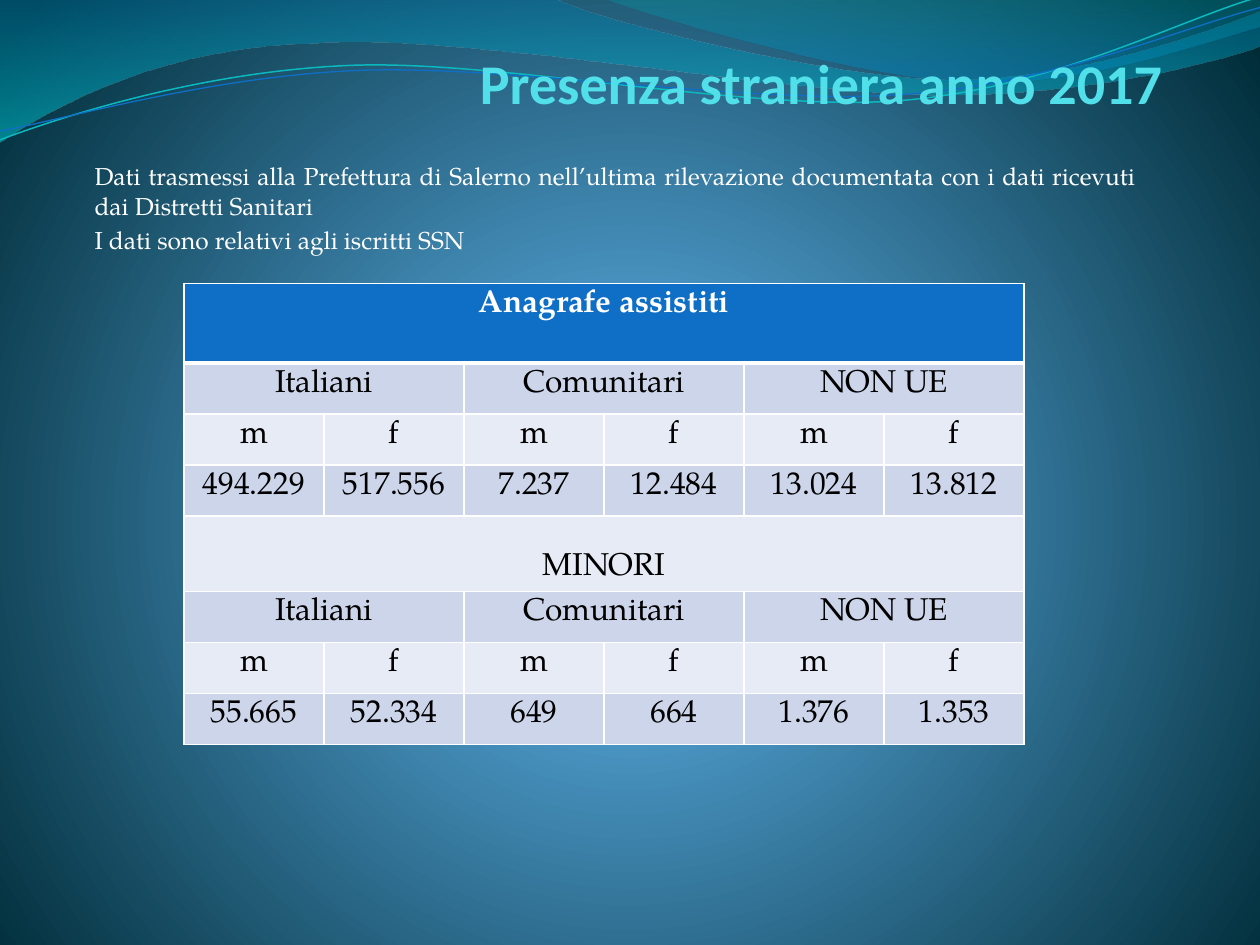
from dataclasses import dataclass

from lxml.etree import SubElement
from pptx import Presentation
from pptx.dml.color import RGBColor
from pptx.enum.text import MSO_ANCHOR, PP_ALIGN
from pptx.oxml import parse_xml
from pptx.oxml.ns import nsdecls, qn
from pptx.util import Inches, Pt

WHITE = RGBColor(0xFF, 0xFF, 0xFF)
BLACK = RGBColor(0, 0, 0)
AQUA = RGBColor(0x51, 0xE0, 0xEA)
TEAL = RGBColor(0x0A, 0xB8, 0xBF)
BLUE = RGBColor(0x0F, 0x6F, 0xC6)
BAND_DARK = RGBColor(0xCC, 0xD5, 0xEA)
BAND_LIGHT = RGBColor(0xE7, 0xEB, 0xF5)
SKY = RGBColor(0x4A, 0xA0, 0xD6)
STEEL = RGBColor(0x4C, 0x98, 0xC7)
NIGHT = RGBColor(0x00, 0x2C, 0x38)
DEEP_BLUE = RGBColor(0x00, 0x74, 0xA1)
CYAN = RGBColor(0x00, 0xC6, 0xCF)
SEA = RGBColor(0x00, 0xA1, 0xA9)
OCEAN = RGBColor(0x00, 0x8B, 0xBF)
SERIF = "TeX Gyre Pagella"
DOWNWARD = '<a:lin ang="5400000" scaled="1"/>'
RADIAL = ('<a:path path="circle"><a:fillToRect l="10000" t="110000" '
          'r="10000" b="100000"/></a:path>')


@dataclass
class Stop:
    position: int
    color: RGBColor
    opacity: int = 100


@dataclass
class Wave:
    """Two coordinates make a straight step, six a Bezier curve."""
    start: tuple
    steps: list
    stops: list | None = None
    line: RGBColor | None = None
    width: float = 0


@dataclass
class Style:
    size: float
    color: RGBColor
    font: str = SERIF
    bold: bool = False
    align: PP_ALIGN = PP_ALIGN.CENTER


WAVES = [
    Wave((0, 0), [(4.4, -0.01), (4.76, 0.17, 6.64, 0.63, 7.58, 0.63),
                  (8.53, 0.63, 9.58, 0.26, 10, 0.09), (10.01, 0.36),
                  (9.83, 0.44, 8.7, 0.76, 7.46, 0.75),
                  (6.22, 0.75, 3.82, 0.28, 2.57, 0.34),
                  (1.29, 0.36, 0.46, 0.83, -0.01, 1.13), (0, 0)],
         [Stop(0, DEEP_BLUE, 45), Stop(100, CYAN, 55)]),
    Wave((4.79, -0.01), [(5.09, 0.11, 6.82, 0.62, 7.69, 0.65),
                         (8.56, 0.69, 9.61, 0.32, 10, 0.21), (10, 0), (4.79, -0.01)],
         [Stop(0, SEA, 30), Stop(80, OCEAN, 45)]),
    Wave((0, 1.11), [(0.48, 0.93, 1.58, 0.57, 2.77, 0.52),
                     (3.95, 0.47, 5.93, 0.89, 7.13, 0.8),
                     (8.33, 0.71, 9.38, 0.15, 9.98, -0.02)], line=TEAL, width=0.85),
    Wave((0, 1.04), [(0.47, 0.96, 1.64, 0.61, 2.83, 0.56),
                     (4.03, 0.51, 5.97, 0.84, 7.17, 0.75),
                     (8.36, 0.67, 9.41, 0.21, 10, 0.06)], line=BLUE, width=0.75),
]

GROUPS = ["Italiani", "Comunitari", "NON UE"]
SEXES = ["m", "f"] * 3
ROWS = [
    ["Anagrafe assistiti"], GROUPS, SEXES,
    ["494.229", "517.556", "7.237", "12.484", "13.024", "13.812"],
    ["MINORI"], GROUPS, SEXES,
    ["55.665", "52.334", "649", "664", "1.376", "1.353"],
]
COLUMNS = 6
MINORS_ROW = 4
TABLE_WIDTH, TABLE_HEIGHT = 6.67, 3.66
HEADER_HEIGHT, MINORS_HEIGHT = 0.63, 0.6


def gradient(stops: list, direction: str):
    marks = "".join(
        f'<a:gs pos="{s.position * 1000}"><a:srgbClr val="{s.color}">'
        f'<a:alpha val="{s.opacity * 1000}"/></a:srgbClr></a:gs>' for s in stops)
    return parse_xml(f'<a:gradFill {nsdecls("a")} rotWithShape="1">'
                     f'<a:gsLst>{marks}</a:gsLst>{direction}</a:gradFill>')


def swap_fill(parent, fill) -> None:
    parent.replace(parent.find(qn("a:solidFill")), fill)


def bend(sp, steps: list) -> None:
    """Turn the six-number steps of a freeform into Bezier curves."""
    outline = next(sp.element.iter(qn("a:path")))
    for segment, step in zip(list(outline.iter(qn("a:lnTo"))), steps):
        if len(step) == 6:
            curve = parse_xml(f'<a:cubicBezTo {nsdecls("a")}/>')
            for x, y in zip(step[::2], step[1::2]):
                SubElement(curve, qn("a:pt"), x=str(Inches(x) - sp.left),
                           y=str(Inches(y) - sp.top))
            outline.replace(segment, curve)


def draw_wave(slide, wave: Wave) -> None:
    builder = slide.shapes.build_freeform(*map(Inches, wave.start))
    ends = [tuple(map(Inches, step[-2:])) for step in wave.steps]
    builder.add_line_segments(ends, close=wave.stops is not None)
    sp = builder.convert_to_shape()
    bend(sp, wave.steps)
    sp.shadow.inherit = False
    if wave.stops:
        sp.fill.solid()
        swap_fill(sp.element.spPr, gradient(wave.stops, DOWNWARD))
        sp.line.fill.background()
    else:
        sp.fill.background()
        sp.line.color.rgb = wave.line
        sp.line.width = Pt(wave.width)


def write(p, text: str, style: Style) -> None:
    p.alignment = style.align
    r = p.add_run()
    r.text = text
    r.font.name = style.font
    r.font.size = Pt(style.size)
    r.font.bold = style.bold
    r.font.color.rgb = style.color


def add_text(slide, box: tuple, lines: list, style: Style, anchor: MSO_ANCHOR,
             inset: float = 0, right: float = 0.02, before: float = 0) -> None:
    tf = slide.shapes.add_textbox(*map(Inches, box)).text_frame
    tf.word_wrap = True
    tf.vertical_anchor = anchor
    tf.margin_left, tf.margin_right = 0, Inches(right)
    tf.margin_top = tf.margin_bottom = Inches(inset)
    for i, line in enumerate(lines):
        p = tf.add_paragraph() if i else tf.paragraphs[0]
        p.space_before = Pt(before)
        write(p, line, style)


def set_borders(cell, top: float, bottom: float) -> None:
    tc_pr = cell._tc.get_or_add_tcPr()
    for i, (side, width) in enumerate(zip("LRTB", (1, 1, top, bottom))):
        ln = SubElement(tc_pr, qn(f"a:ln{side}"), w=str(Pt(width)))
        fill = SubElement(ln, qn("a:solidFill"))
        SubElement(fill, qn("a:srgbClr"), val=str(WHITE))
        tc_pr.insert(i, ln)


def add_register(slide) -> None:
    plain = (TABLE_HEIGHT - HEADER_HEIGHT - MINORS_HEIGHT) / (len(ROWS) - 2)
    heights = [HEADER_HEIGHT] + [plain] * (len(ROWS) - 1)
    heights[MINORS_ROW] = MINORS_HEIGHT
    table = slide.shapes.add_table(
        len(ROWS), COLUMNS, Inches(1.46), Inches(2.25),
        Inches(TABLE_WIDTH), Inches(TABLE_HEIGHT)).table
    for column in table.columns:
        column.width = Inches(TABLE_WIDTH / COLUMNS)
    for i, (texts, height) in enumerate(zip(ROWS, heights)):
        table.rows[i].height = Inches(height)
        span = COLUMNS // len(texts)
        header = i == 0
        fill = BLUE if header else BAND_DARK if i % 2 else BAND_LIGHT
        style = Style(18, WHITE if header else BLACK, bold=header)
        for j in range(COLUMNS):
            cell = table.cell(i, j)
            cell.fill.solid()
            cell.fill.fore_color.rgb = fill
            set_borders(cell, 3 if i == 1 else 1, 3 if header else 1)
            cell.margin_left = cell.margin_right = Inches(0.07)
            cell.margin_top = Inches(0.29 if i == MINORS_ROW else 0.05)
            cell.margin_bottom = 0
            if j % span == 0:
                if span > 1:
                    cell.merge(table.cell(i, j + span - 1))
                write(cell.text_frame.paragraphs[0], texts[j // span], style)


def main() -> None:
    prs = Presentation()
    prs.slide_width, prs.slide_height = Inches(10), Inches(7.5)
    s = prs.slides.add_slide(prs.slide_layouts[6])

    # Background and waves
    s.background.fill.solid()
    swap_fill(next(s.element.iter(qn("p:bgPr"))),
              gradient([Stop(0, SKY), Stop(25, STEEL), Stop(100, NIGHT)], RADIAL))
    for wave in WAVES:
        draw_wave(s, wave)

    # Title and introduction
    add_text(s, (0.75, 0.53, 8.5, 0.39), ["Presenza straniera anno 2017"],
             Style(32, AQUA, "Calibri", True, PP_ALIGN.RIGHT), MSO_ANCHOR.BOTTOM)
    add_text(s, (0.75, 1.23, 8.35, 5.91),
             ["Dati trasmessi alla Prefettura di Salerno nell’ultima rilevazione "
              "documentata con i dati ricevuti dai Distretti Sanitari",
              "I dati sono relativi agli iscritti SSN"],
             Style(14, WHITE, align=PP_ALIGN.JUSTIFY), MSO_ANCHOR.TOP, 0.05, 0.08, 2.8)

    # Register of assisted people
    add_register(s)
    prs.save("out.pptx")


if __name__ == "__main__":
    main()
